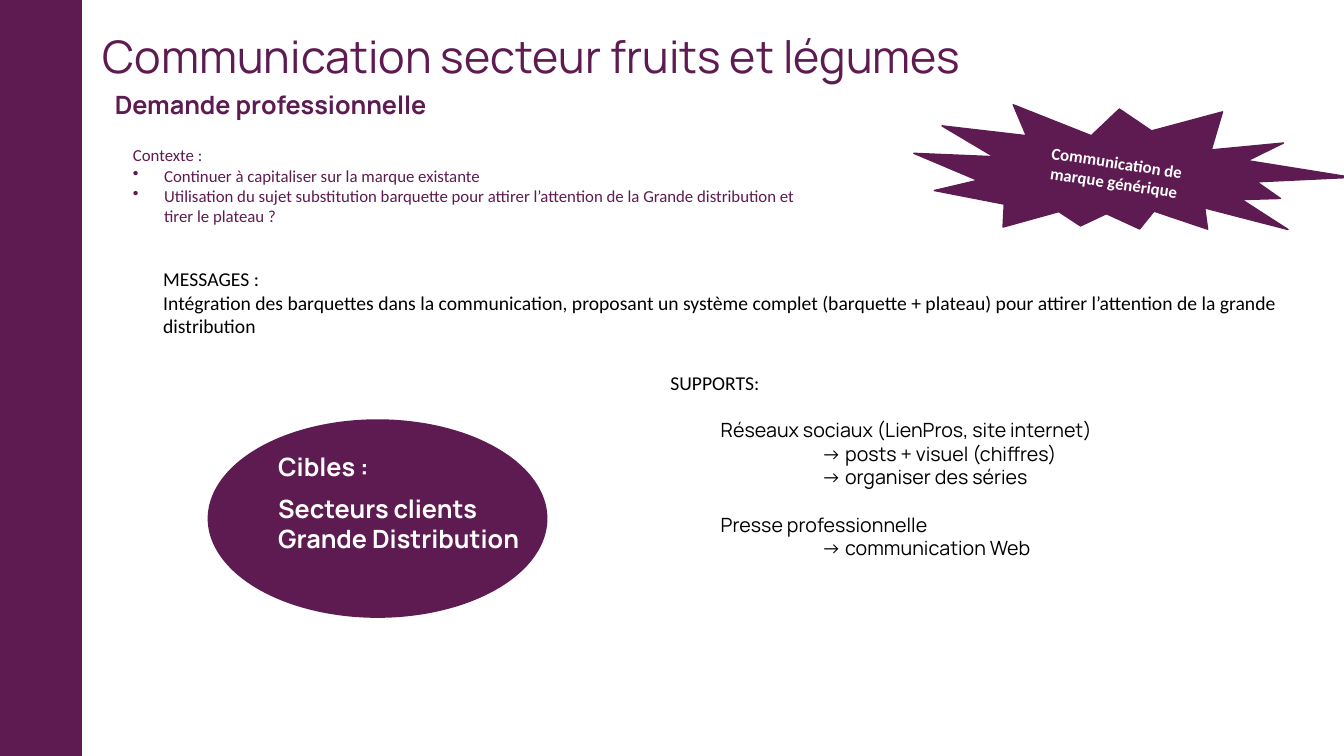
from pptx import Presentation
from pptx.dml.color import RGBColor
from pptx.enum.shapes import MSO_SHAPE as Shape
from pptx.enum.text import MSO_ANCHOR as Anchor, PP_ALIGN as Align
from pptx.oxml.xmlchemy import OxmlElement
from pptx.util import Inches, Pt

PLUM, WHITE, BLACK = "5E1B51", "FFFFFF", "000000"


def paint(color_format, color):
    color_format.rgb = RGBColor.from_string(color)


def write(frame, lines, size, font, color, bold=False):
    frame.word_wrap = True
    for i, (text, indent, hanging, bullet, gap) in enumerate(lines):
        p = frame.paragraphs[0] if i == 0 else frame.add_paragraph()
        pPr = p._p.get_or_add_pPr()
        pPr.set("marL", str(Inches(indent)))
        pPr.set("indent", str(Inches(hanging)))
        if gap:
            p.space_before = Pt(gap)
        if bullet:
            mark = OxmlElement("a:buChar")
            mark.set("char", bullet)
            pPr.append(mark)
        run = p.add_run()
        run.text = text
        run.font.size = Pt(size)
        run.font.name = font
        run.font.bold = bold
        paint(run.font.color, color)


prs = Presentation()
prs.slide_width, prs.slide_height = Inches(13.33), Inches(7.5)
slide = prs.slides.add_slide(prs.slide_layouts[6])

figures = []
for kind, left, top, width, height, outlined in [
    (Shape.RECTANGLE, 0, 0, 0.81, 7.5, True),
    (Shape.EXPLOSION2, 9.06, 0.98, 4.33, 1.46, True),
    (Shape.OVAL, 2.06, 4.16, 3.37, 1.97, False),
]:
    figure = slide.shapes.add_shape(
        kind, Inches(left), Inches(top), Inches(width), Inches(height))
    figure.shadow.inherit = False
    figure.fill.solid()
    paint(figure.fill.fore_color, PLUM)
    if outlined:
        figure.line.width = Pt(1)
        paint(figure.line.color, PLUM)
    else:
        figure.line.fill.background()
    figures.append(figure)

side_band, burst, target_oval = figures
burst.rotation = 8.7
write(burst.text_frame, [("Communication de marque générique", 0, 0, None, 0)],
      12, "Calibri", WHITE, True)
burst.text_frame.vertical_anchor = Anchor.MIDDLE
burst.text_frame.paragraphs[0].alignment = Align.CENTER

title = [("Communication secteur fruits et légumes", 0, 0, None, 0)]
subtitle = [("Demande professionnelle", 0, 0, None, 0)]
messages = [
    ("MESSAGES :", 0, 0, None, 0),
    ("Intégration des barquettes dans la communication, proposant un système complet "
     "(barquette + plateau) pour attirer l’attention de la grande distribution", 0, 0, None, 0),
]
context = [
    ("Contexte :", 0, 0, None, 0),
    ("Continuer à capitaliser sur la marque existante", 0.31, -0.31, "•", 0),
    ("Utilisation du sujet substitution barquette pour attirer l’attention de la "
     "Grande distribution et tirer le plateau ?", 0.31, -0.31, "•", 0),
]
targets = [
    ("Cibles :", 0, 0, None, 0),
    ("Secteurs clients", 0, 0, None, 8),
    ("Grande Distribution", 0, 0, None, 0),
]
supports = [("SUPPORTS:", 0, 0, None, 0)]
channels = [
    ("Réseaux sociaux (LienPros, site internet)", 0.5, 0, None, 0),
    ("→ posts + visuel (chiffres)", 1.5, 0, None, 0),
    ("→ organiser des séries", 1.5, 0, None, 0),
    ("Presse professionnelle", 0.5, 0, None, 17),
    ("→ communication Web", 1.5, 0, None, 0),
]

for lines, left, top, width, height, size, font, color, bold in [
    (title, 0.92, 0.11, 12.28, 0.96, 32, "Manrope", PLUM, False),
    (subtitle, 1.04, 0.84, 4.21, 0.4, 18, "Manrope", PLUM, True),
    (messages, 1.52, 2.6, 11.52, 0.81, 14, "Calibri", BLACK, False),
    (context, 1.22, 1.39, 6.89, 0.91, 12, "Calibri", PLUM, False),
    (targets, 2.66, 4.43, 4.21, 1.13, 18, "Manrope", WHITE, True),
    (supports, 6.55, 3.63, 6.65, 0.34, 14, "Calibri", BLACK, False),
    (channels, 6.55, 4.1, 6.65, 1.99, 14, "Manrope", BLACK, False),
]:
    box = slide.shapes.add_textbox(
        Inches(left), Inches(top), Inches(width), Inches(height))
    write(box.text_frame, lines, size, font, color, bold)
    if lines is title:
        box.text_frame.vertical_anchor = Anchor.MIDDLE
        box.text_frame.paragraphs[0].line_spacing = 0.9

prs.save("out.pptx")
